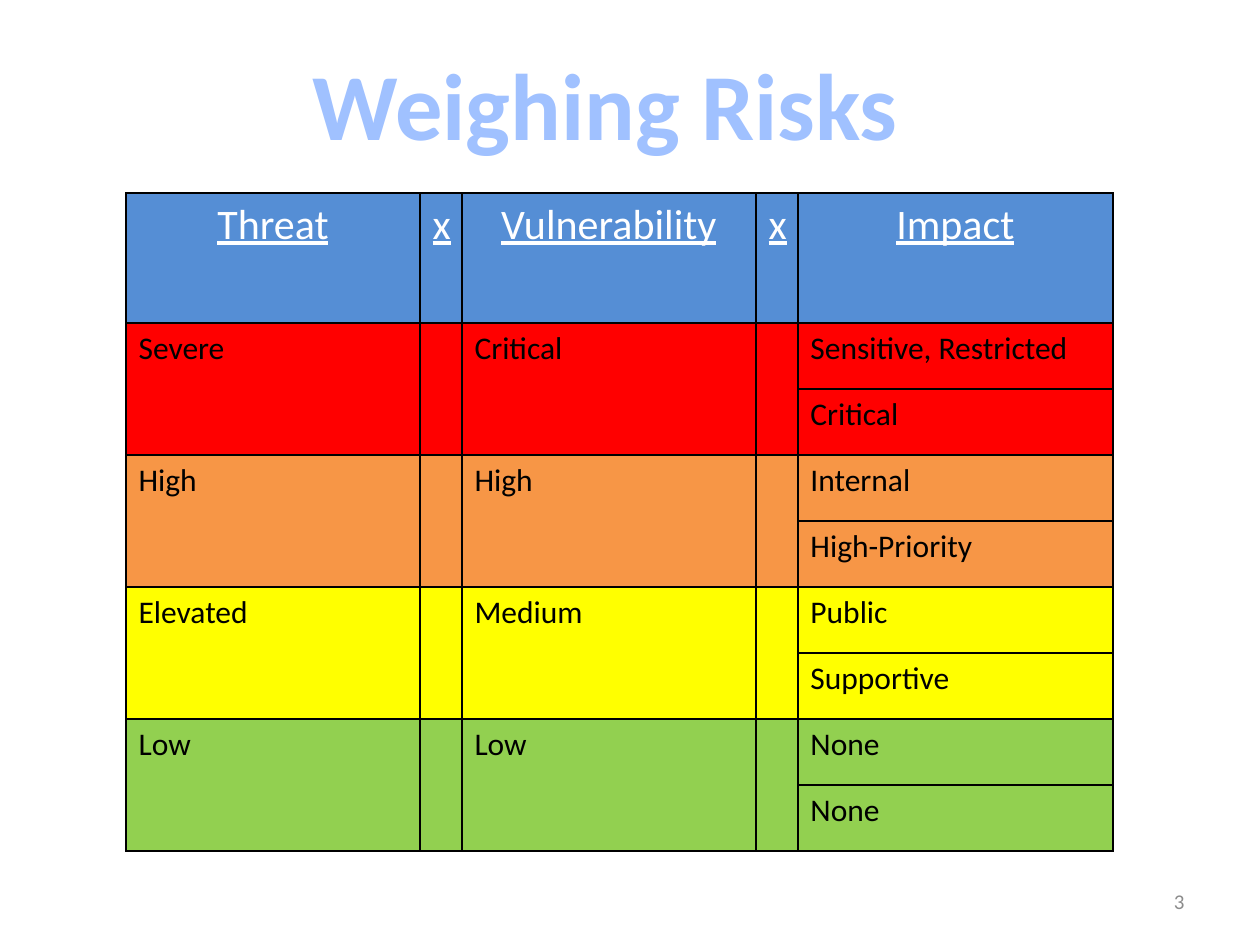
"""Builds the risk weighing slide with its threat, vulnerability and impact table."""
from dataclasses import dataclass

from pptx import Presentation
from pptx import util as u
from pptx.dml.color import RGBColor
from pptx.enum import text
from pptx.oxml import parse_xml
from pptx.oxml.ns import nsdecls

EMU_PER_PX = u.Inches(1) / 126
ALIGN = text.PP_ALIGN
ANCHOR = text.MSO_ANCHOR


@dataclass(frozen=True)
class Theme:
    font: str = "Calibri"
    title: str = "A0C1FF"
    header: str = "558ED5"
    header_text: str = "FFFFFF"
    ink: str = "000000"
    muted: str = "8C8C8C"
    severe: str = "FF0000"
    high: str = "F79646"
    elevated: str = "FFFF00"
    low: str = "92D050"
    title_size: int = 54
    header_size: int = 24
    body_size: int = 18
    number_size: int = 12


def px(length):
    return u.Emu(round(length * EMU_PER_PX))


def write(frame, words, *, font, size, color, bold=False, underline=False, align=ALIGN.LEFT):
    paragraph = frame.paragraphs[0]
    paragraph.alignment = align
    run = paragraph.add_run()
    run.text = words
    run.font.name = font
    run.font.size = u.Pt(size)
    run.font.bold = bold
    run.font.underline = underline
    run.font.color.rgb = RGBColor.from_string(color)


class SlideBuilder:
    def __init__(self, presentation, theme):
        self.theme = theme
        self.slide = presentation.slides.add_slide(presentation.slide_layouts[5])

    def title(self, words, left, top, width, height):
        shape = self.slide.shapes.title
        shape.left, shape.top, shape.width, shape.height = map(px, (left, top, width, height))
        frame = shape.text_frame
        frame.auto_size = text.MSO_AUTO_SIZE.NONE
        frame.vertical_anchor = ANCHOR.TOP
        write(frame, words, font=self.theme.font, size=self.theme.title_size,
              color=self.theme.title, bold=True, align=ALIGN.CENTER)

    def slide_number(self, words, left, top, width, height):
        shape = self.slide.shapes.add_textbox(*map(px, (left, top, width, height)))
        frame = shape.text_frame
        frame.word_wrap = True
        frame.vertical_anchor = ANCHOR.MIDDLE
        write(frame, words, font=self.theme.font, size=self.theme.number_size,
              color=self.theme.muted, align=ALIGN.RIGHT)

    def style_cell(self, cell, fill):
        properties = cell._tc.get_or_add_tcPr()
        for side in "LRTB":
            properties.append(parse_xml(
                f'<a:ln{side} {nsdecls("a")} w="{u.Pt(1)}"><a:solidFill>'
                f'<a:srgbClr val="{self.theme.ink}"/></a:solidFill></a:ln{side}>'))
        cell.fill.solid()
        cell.fill.fore_color.rgb = RGBColor.from_string(fill)

    def risk_table(self, headers, levels, left, top, widths, header_height, row_height):
        heights = [header_height] + [row_height] * (2 * len(levels))
        table = self.slide.shapes.add_table(
            len(heights), len(widths), px(left), px(top),
            px(sum(widths)), px(sum(heights))).table
        for column, width in zip(table.columns, widths):
            column.width = px(width)
        for row, height in zip(table.rows, heights):
            row.height = px(height)

        fills = [self.theme.header] + [level[0] for level in levels for _ in range(2)]
        for row, fill in zip(table.rows, fills):
            for cell in row.cells:
                self.style_cell(cell, fill)

        for column, words in enumerate(headers):
            write(table.cell(0, column).text_frame, words, font=self.theme.font,
                  size=self.theme.header_size, color=self.theme.header_text,
                  underline=True, align=ALIGN.CENTER)
        last = len(widths) - 1
        for index, (_, threat, vulnerability, impacts) in enumerate(levels):
            row = 1 + 2 * index
            for column in range(last):
                table.cell(row, column).merge(table.cell(row + 1, column))
            entries = [(row, 0, threat), (row, 2, vulnerability)]
            entries += [(row + step, last, impact) for step, impact in enumerate(impacts)]
            for entry_row, column, words in entries:
                write(table.cell(entry_row, column).text_frame, words, font=self.theme.font,
                      size=self.theme.body_size, color=self.theme.ink)


def main():
    theme = Theme()
    presentation = Presentation()
    presentation.slide_width = px(1260)
    presentation.slide_height = px(945)
    builder = SlideBuilder(presentation, theme)
    builder.title("Weighing Risks", 262, 40, 687, 127)
    builder.risk_table(
        ["Threat", "x", "Vulnerability", "x", "Impact"],
        [
            (theme.severe, "Severe", "Critical", ("Sensitive, Restricted", "Critical")),
            (theme.high, "High", "High", ("Internal", "High-Priority")),
            (theme.elevated, "Elevated", "Medium", ("Public", "Supportive")),
            (theme.low, "Low", "Low", ("None", "None")),
        ],
        left=126, top=193, widths=[294, 42, 294, 42, 315], header_height=130, row_height=66)
    builder.slide_number("3", 903, 876, 294, 50)
    presentation.save("out.pptx")


if __name__ == "__main__":
    main()
